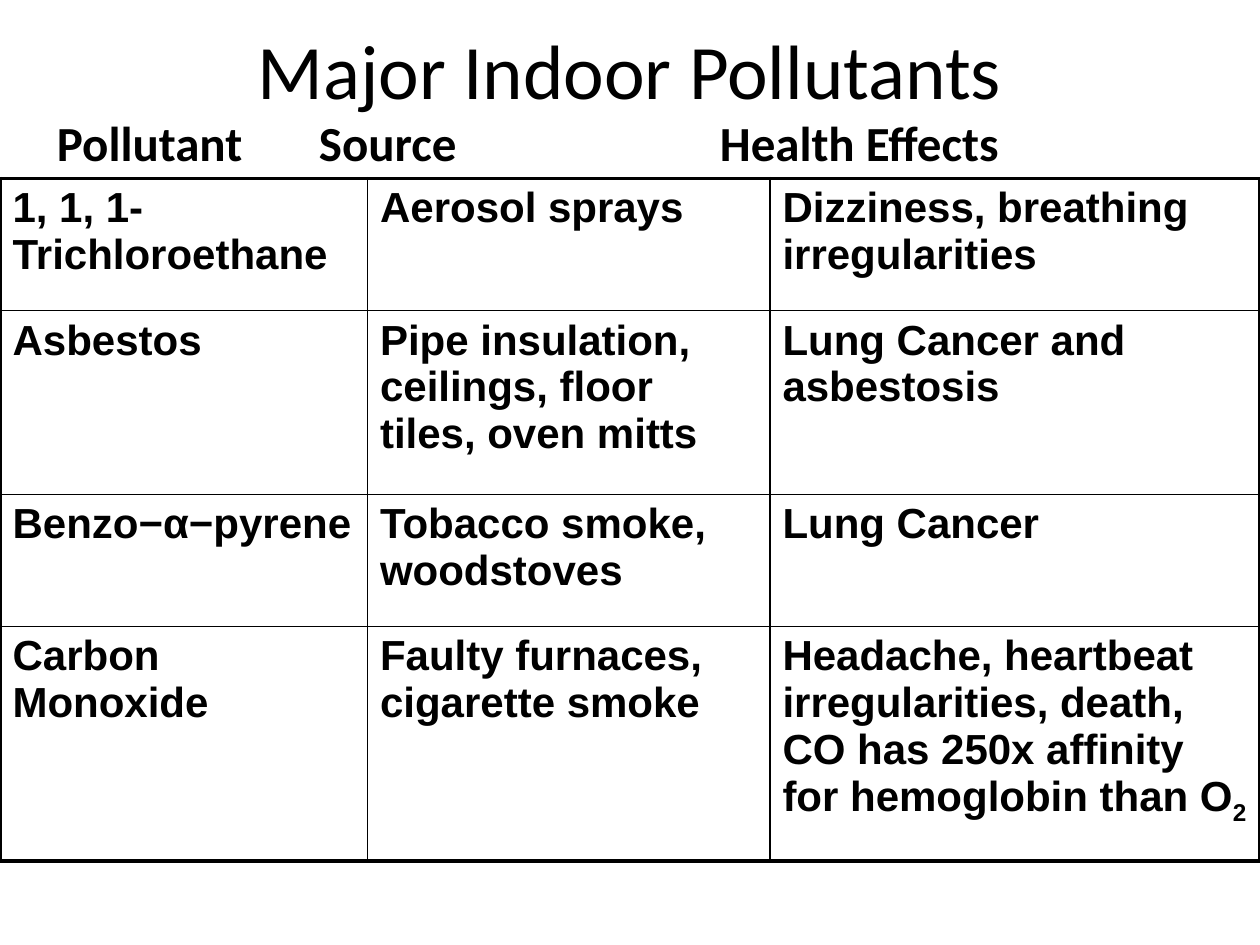
import dataclasses

import lxml.etree
import pptx
import pptx.dml.color
import pptx.enum.text
import pptx.oxml.ns
import pptx.util

Pt = pptx.util.Pt


@dataclasses.dataclass(frozen=True)
class Theme:
    """Colours, fonts, type sizes and line widths of the slide."""
    ink: str = "000000"
    heading_font: str = "Calibri"
    body_font: str = "Arial"
    title_size: float = 44
    heading_size: float = 28
    body_size: float = 24
    frame_line: float = 2.25
    grid_line: float = 1


THEME = Theme()
COLUMN_HEADINGS = ["Pollutant", "Source", "Health Effects"]
HEADING_TABS = [149.7, 378.8]
COLUMN_WIDTHS = [210, 230, 280]
ROW_HEIGHTS = [75.6, 104.9, 75.6, 134]
POLLUTANTS = [
    ["1, 1, 1-Trichloroethane", "Aerosol sprays", "Dizziness, breathing irregularities"],
    ["Asbestos", "Pipe insulation, ceilings, floor tiles, oven mitts",
     "Lung Cancer and asbestosis"],
    ["Benzo−α−pyrene", "Tobacco smoke, woodstoves", "Lung Cancer"],
    ["Carbon Monoxide", "Faulty furnaces, cigarette smoke",
     "Headache, heartbeat irregularities, death, CO has 250x affinity for hemoglobin than O"],
]


def apply_format(target, values):
    """Set each named attribute of the target."""
    for name, value in values.items():
        setattr(target, name, value)


def style_font(font, family, size, bold):
    """Give a font its family, size, weight and ink."""
    apply_format(font, {"name": family, "size": Pt(size), "bold": bold})
    font.color.rgb = pptx.dml.color.RGBColor.from_string(THEME.ink)


def add_child(parent, tag, **attributes):
    """Append a DrawingML element."""
    return lxml.etree.SubElement(parent, pptx.oxml.ns.qn(tag), attributes)


def place_title(slide, left, top, width, height):
    """Move and format the title placeholder."""
    title = slide.shapes.title
    apply_format(title, {"left": Pt(left), "top": Pt(top),
                         "width": Pt(width), "height": Pt(height)})
    apply_format(title.text_frame, {
        "text": "Major Indoor Pollutants",
        "vertical_anchor": pptx.enum.text.MSO_ANCHOR.MIDDLE})
    paragraph = title.text_frame.paragraphs[0]
    paragraph.alignment = pptx.enum.text.PP_ALIGN.CENTER
    style_font(paragraph.runs[0].font, THEME.heading_font, THEME.title_size, False)


def place_headings(slide, left, top, width, height):
    """Write the column headings on one tabbed line."""
    frame = slide.shapes.add_textbox(Pt(left), Pt(top), Pt(width), Pt(height)).text_frame
    apply_format(frame, {"word_wrap": True, "margin_left": Pt(26.6)})
    paragraph = frame.paragraphs[0]
    tabs = add_child(paragraph._p.get_or_add_pPr(), "a:tabLst")
    for position in HEADING_TABS:
        add_child(tabs, "a:tab", pos=str(int(Pt(position))), algn="l")
    headings = paragraph.add_run()
    headings.text = "\t".join(COLUMN_HEADINGS)
    style_font(headings.font, THEME.heading_font, THEME.heading_size, True)


def draw_borders(cell, on_frame):
    """Draw the four cell borders, thicker where they lie on the frame."""
    properties = cell._tc.get_or_add_tcPr()
    for index, (side, is_frame) in enumerate(on_frame.items()):
        width = THEME.frame_line if is_frame else THEME.grid_line
        border = add_child(properties, f"a:ln{side}", w=str(int(Pt(width))))
        add_child(add_child(border, "a:solidFill"), "a:srgbClr", val=THEME.ink)
        properties.insert(index, border)


def place_table(slide, left, top, width, height):
    """Build the table of pollutants, sources and effects."""
    table = slide.shapes.add_table(len(ROW_HEIGHTS), len(COLUMN_WIDTHS), Pt(left), Pt(top),
                                   Pt(width), Pt(height)).table
    apply_format(table, {"first_row": False, "horz_banding": False})
    for column, column_width in zip(table.columns, COLUMN_WIDTHS):
        column.width = Pt(column_width)
    last_row, last_column = len(ROW_HEIGHTS) - 1, len(COLUMN_WIDTHS) - 1
    for r, (row, row_height) in enumerate(zip(table.rows, ROW_HEIGHTS)):
        row.height = Pt(row_height)
        for c, cell in enumerate(row.cells):
            cell.text = POLLUTANTS[r][c]
            style_font(cell.text_frame.paragraphs[0].runs[0].font,
                       THEME.body_font, THEME.body_size, True)
            cell.fill.background()
            draw_borders(cell, {"L": c == 0, "R": c == last_column,
                                "T": r == 0, "B": r == last_row})
    subscript = table.cell(last_row, last_column).text_frame.paragraphs[0].add_run()
    subscript.text = "2"
    style_font(subscript.font, THEME.body_font, THEME.body_size, True)
    subscript._r.get_or_add_rPr().set("baseline", "-25000")


def main():
    """Build and save the slide."""
    deck = pptx.Presentation()
    apply_format(deck, {"slide_width": Pt(720), "slide_height": Pt(540)})
    slide = deck.slides.add_slide(deck.slide_layouts[5])
    place_title(slide, 36, 6, 648, 66)
    place_table(slide, 0, 102, sum(COLUMN_WIDTHS), sum(ROW_HEIGHTS))
    place_headings(slide, 6, 61, 714, 41)
    deck.save("out.pptx")


if __name__ == "__main__":
    main()
